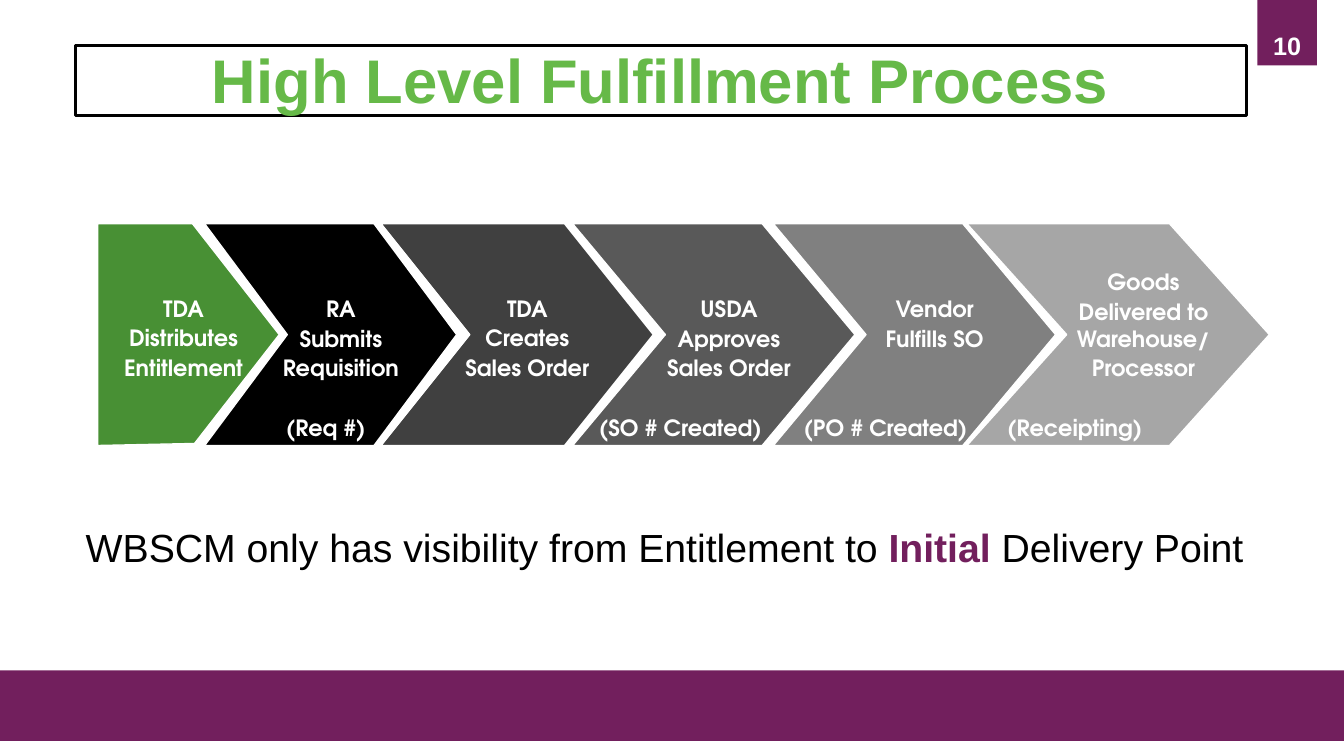
import dataclasses

import pptx
import pptx.dml.color
import pptx.enum.shapes
import pptx.enum.text
import pptx.oxml.xmlchemy
import pptx.util
from pptx.util import Inches


@dataclasses.dataclass(frozen=True)
class Theme:
    purple: str = "721F5D"
    title_green: str = "66B948"
    arrow_green: str = "489034"
    black: str = "000000"
    white: str = "FFFFFF"
    font: str = "Arial"
    arrow_font: str = "TeX Gyre Adventor"
    title_size: int = 44
    body_size: int = 28
    number_size: int = 18
    arrow_size: int = 16


theme = Theme()
rgb = pptx.dml.color.RGBColor.from_string
align = pptx.enum.text.PP_ALIGN
anchor = pptx.enum.text.MSO_ANCHOR


def add_run(paragraph, text, size, color, bold=True, font=theme.font):
    run = paragraph.add_run()
    run.text = text
    run.font.name = font
    run.font.size = pptx.util.Pt(size)
    run.font.bold = bold
    run.font.color.rgb = rgb(color)


def place(shape, left, top, width, height):
    shape.left, shape.top = Inches(left), Inches(top)
    shape.width, shape.height = Inches(width), Inches(height)
    frame = shape.text_frame
    frame.word_wrap = True
    frame.auto_size = pptx.enum.text.MSO_AUTO_SIZE.NONE
    frame.vertical_anchor = anchor.TOP
    paragraph = frame.paragraphs[0]
    paragraph.line_spacing = 0.9
    paragraph.space_before = pptx.util.Pt(0)
    return paragraph


presentation = pptx.Presentation()
presentation.slide_width = Inches(13.33)
presentation.slide_height = Inches(7.5)
slide = presentation.slides.add_slide(presentation.slide_layouts[1])

# Title
title = slide.shapes.title
paragraph = place(title, 0.75, 0.45, 11.61, 0.7)
paragraph.alignment = align.CENTER
title.line.color.rgb = rgb(theme.black)
title.line.width = pptx.util.Pt(2.25)
add_run(paragraph, "High Level Fulfillment Process", theme.title_size, theme.title_green)

# Page number tab and footer band
for left, top, width, height, text in [
    (12.47, 0, 0.59, 0.65, "10"),
    (0, 6.65, 13.33, 0.7, ""),
]:
    shape = slide.shapes.add_shape(
        pptx.enum.shapes.MSO_SHAPE.RECTANGLE,
        Inches(left), Inches(top), Inches(width), Inches(height),
    )
    shape.shadow.inherit = False
    shape.fill.solid()
    shape.fill.fore_color.rgb = rgb(theme.purple)
    shape.line.fill.background()
    if text:
        shape.text_frame.vertical_anchor = anchor.BOTTOM
        paragraph = shape.text_frame.paragraphs[0]
        paragraph.alignment = align.CENTER
        add_run(paragraph, text, theme.number_size, theme.white)

# Process arrows: left, shoulder, tip, fill, left inset, label indent, label lines
arrow_top, arrow_middle, arrow_bottom = 2.22, 3.32, 4.42
row_height = 21.1  # points from one label line to the next
label_rows = 4  # rows above the note
arrows = [
    (0.97, 1.91, 2.77, theme.arrow_green, 0, 0,
     ["TDA", "Distributes", "Entitlement"], None),
    (2.03, 3.71, 4.53, theme.black, 0, 0.3,
     ["RA", "Submits", "Requisition"], ("(Req #)", align.CENTER, 0)),
    (3.78, 5.6, 6.48, "404040", 0, 0.3,
     ["TDA", "Creates", "Sales Order"], None),
    (5.68, 7.56, 8.48, "595959", 0.2, 0.2,
     ["USDA", "Approves", "Sales Order"], ("(SO # Created)", align.LEFT, 0.06)),
    (7.67, 9.55, 10.47, "808080", 0.3, 0.2,
     ["Vendor", "Fulfills SO"], ("(PO # Created)", align.LEFT, 0)),
    (9.59, 11.6, 12.59, "A6A6A6", 0.4, 0.2,
     ["Goods", "Delivered to Warehouse/", "Processor"], ("(Receipting)", align.LEFT, 0)),
]
for index, (left, shoulder, tip, fill, inset, indent, lines, note) in enumerate(arrows):
    if index == 0:
        outline = [(shoulder, arrow_top), (tip, arrow_middle),
                   (shoulder + 0.02, arrow_bottom - 0.02), (left, arrow_bottom)]
    else:
        outline = [(shoulder, arrow_top), (tip, arrow_middle), (shoulder, arrow_bottom),
                   (left, arrow_bottom), (left + tip - shoulder, arrow_middle)]
    builder = slide.shapes.build_freeform(Inches(left), Inches(arrow_top))
    builder.add_line_segments([(Inches(x), Inches(y)) for x, y in outline], close=True)
    arrow = builder.convert_to_shape()
    arrow.shadow.inherit = False
    arrow.fill.solid()
    arrow.fill.fore_color.rgb = rgb(fill)
    arrow.line.color.rgb = rgb(theme.white)
    arrow.line.width = pptx.util.Pt(1)

    frame = arrow.text_frame
    frame.word_wrap = True
    frame.vertical_anchor = anchor.BOTTOM
    frame.margin_left, frame.margin_right = Inches(inset), Inches(0.1)
    frame.margin_top = Inches(0.05)
    frame.margin_bottom = Inches(0.05 if note else 0.64)
    rows = [(line, align.CENTER, indent) for line in lines]
    if note:
        rows.append(note)
    for number, (text, alignment, margin) in enumerate(rows):
        paragraph = frame.add_paragraph() if number else frame.paragraphs[0]
        paragraph.alignment = alignment
        paragraph._p.get_or_add_pPr().set("marL", str(Inches(margin)))
        is_note = number == len(lines)
        gap = 1 + row_height * (label_rows - len(lines)) if is_note else min(number, 1)
        paragraph.space_before = pptx.util.Pt(gap)
        paragraph.space_after = pptx.util.Pt(1)
        add_run(paragraph, text, theme.arrow_size, theme.white, font=theme.arrow_font)

# Statement under the arrows
paragraph = place(slide.placeholders[1], 0.75, 5.19, 11.93, 0.7)
properties = paragraph._p.get_or_add_pPr()
properties.set("marL", "0")
properties.set("indent", "0")
properties.append(pptx.oxml.xmlchemy.OxmlElement("a:buNone"))
for text, color, bold in [
    ("WBSCM only has visibility from Entitlement to ", theme.black, False),
    ("Initial", theme.purple, True),
    (" Delivery Point", theme.black, False),
]:
    add_run(paragraph, text, theme.body_size, color, bold)

presentation.save("out.pptx")
